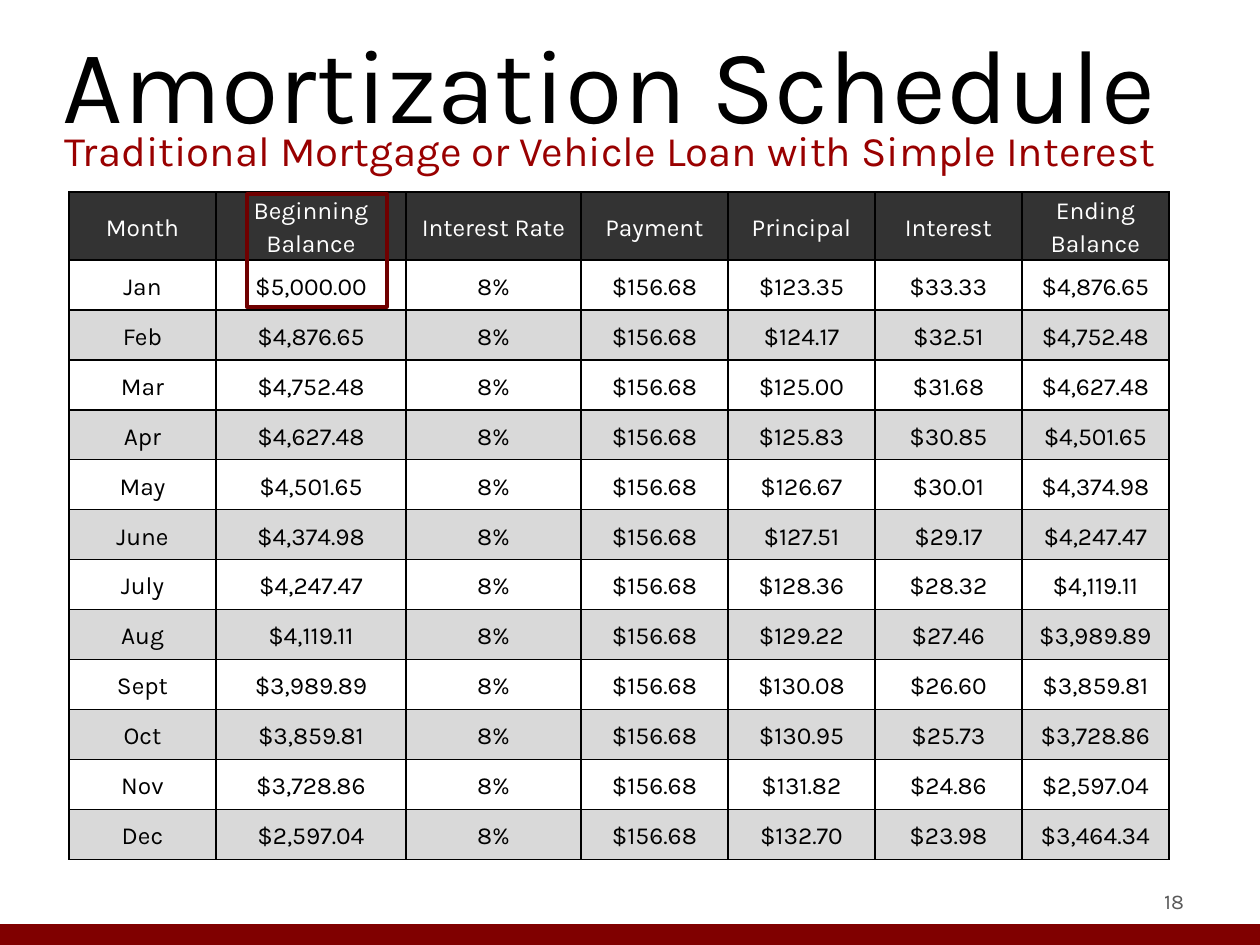
from lxml.etree import SubElement
from pptx import Presentation
from pptx.dml.color import RGBColor
from pptx.enum.shapes import MSO_CONNECTOR, MSO_SHAPE
from pptx.enum.text import MSO_ANCHOR, PP_ALIGN
from pptx.oxml.ns import qn
from pptx.util import Emu, Pt

FONT = "Karla"
COLORS = {
    "black": "000000",
    "white": "FFFFFF",
    "header": "333333",
    "band": "D9D9D9",
    "subtitle": "990000",
    "footer": "800000",
    "marker": "6F0000",
    "number": "595959",
}

HEADERS = ["Month", "Beginning Balance", "Interest Rate", "Payment",
           "Principal", "Interest", "Ending Balance"]
OPENING, RATE, PAYMENT = "$5,000.00", "8%", "$156.68"
# Month, principal, interest, ending balance
MONTHS = [
    ("Jan", "$123.35", "$33.33", "$4,876.65"),
    ("Feb", "$124.17", "$32.51", "$4,752.48"),
    ("Mar", "$125.00", "$31.68", "$4,627.48"),
    ("Apr", "$125.83", "$30.85", "$4,501.65"),
    ("May", "$126.67", "$30.01", "$4,374.98"),
    ("June", "$127.51", "$29.17", "$4,247.47"),
    ("July", "$128.36", "$28.32", "$4,119.11"),
    ("Aug", "$129.22", "$27.46", "$3,989.89"),
    ("Sept", "$130.08", "$26.60", "$3,859.81"),
    ("Oct", "$130.95", "$25.73", "$3,728.86"),
    ("Nov", "$131.82", "$24.86", "$2,597.04"),
    ("Dec", "$132.70", "$23.98", "$3,464.34"),
]
COL_WIDTHS = [147, 190, 175, 147, 147, 147, 147]
HEADER_H, ROW_H = 68, 50


def px(n):
    return Emu(round(n * 914400 / 126))


def rgb(name):
    return RGBColor.from_string(COLORS[name])


def style_text(tf, size, color, align=PP_ALIGN.LEFT, spacing=None):
    for p in tf.paragraphs:
        p.alignment = align
        if spacing:
            p.line_spacing = spacing
        for r in p.runs:
            r.font.name = FONT
            r.font.size = Pt(size)
            r.font.color.rgb = rgb(color)


def add_text(s, box, text, size, color, margins=(0, 0),
             anchor=MSO_ANCHOR.TOP, **style):
    tf = s.shapes.add_textbox(*map(px, box)).text_frame
    tf.word_wrap = True
    tf.margin_left = tf.margin_right = px(margins[0])
    tf.margin_top = tf.margin_bottom = px(margins[1])
    tf.vertical_anchor = anchor
    tf.text = text
    style_text(tf, size, color, **style)


def add_heading(s, x, y):
    add_text(s, (x, y, 1197, 195), "Amortization Schedule", 60, "black")
    add_text(s, (x + 2, y + 98, 1206, 120),
             "Traditional Mortgage or Vehicle Loan with Simple Interest",
             24, "subtitle", spacing=1.17)


def border_cell(cell):
    tc_pr = cell._tc.get_or_add_tcPr()
    for i, side in enumerate(("a:lnL", "a:lnR", "a:lnT", "a:lnB")):
        ln = tc_pr.makeelement(qn(side), {"w": str(Pt(1))})
        fill = SubElement(ln, qn("a:solidFill"))
        SubElement(fill, qn("a:srgbClr"), val=COLORS["black"])
        tc_pr.insert(i, ln)  # borders come before the cell fill


def schedule_rows():
    rows, beginning = [HEADERS], OPENING
    for month, principal, interest, ending in MONTHS:
        rows.append([month, beginning, RATE, PAYMENT, principal, interest, ending])
        beginning = ending
    return rows


def add_schedule(s, x, y):
    rows = schedule_rows()
    height = HEADER_H + ROW_H * len(MONTHS)
    table = s.shapes.add_table(len(rows), len(HEADERS), px(x), px(y),
                               px(sum(COL_WIDTHS)), px(height)).table
    table.first_row = table.horz_banding = False
    for col, width in zip(table.columns, COL_WIDTHS):
        col.width = px(width)
    for i, values in enumerate(rows):
        table.rows[i].height = px(ROW_H if i else HEADER_H)
        fill = "header" if i == 0 else "white" if i % 2 else "band"
        for j, value in enumerate(values):
            cell = table.cell(i, j)
            cell.text = value
            cell.vertical_anchor = MSO_ANCHOR.MIDDLE
            cell.margin_left = cell.margin_right = px(9)
            cell.margin_top = cell.margin_bottom = 0
            cell.fill.solid()
            cell.fill.fore_color.rgb = rgb(fill)
            border_cell(cell)
            style_text(cell.text_frame, 14, "black" if i else "white",
                       align=PP_ALIGN.CENTER, spacing=1.15)

    # Frame around the opening balance
    sp = s.shapes.add_shape(MSO_SHAPE.RECTANGLE, px(x + 178), px(y + 2),
                            px(140), px(113))
    sp.shadow.inherit = False
    sp.fill.background()
    sp.line.color.rgb = rgb("marker")
    sp.line.width = Pt(2)


def add_footer(s, y, width):
    line = s.shapes.add_connector(MSO_CONNECTOR.STRAIGHT,
                                  0, px(y), px(width), px(y))
    line.line.color.rgb = rgb("footer")
    line.line.width = Pt(12)
    SubElement(line._element.spPr, qn("a:effectLst"))
    add_text(s, (width - 357, y - 59, 294, 50), "18", 12, "number",
             margins=(13, 6), anchor=MSO_ANCHOR.MIDDLE, align=PP_ALIGN.RIGHT)


def main():
    prs = Presentation()
    prs.slide_width, prs.slide_height = px(1260), px(945)
    s = prs.slides.add_slide(prs.slide_layouts[6])
    add_footer(s, 935, 1260)
    add_heading(s, 63, 18)
    add_schedule(s, 69, 192)
    prs.save("out.pptx")


if __name__ == "__main__":
    main()
